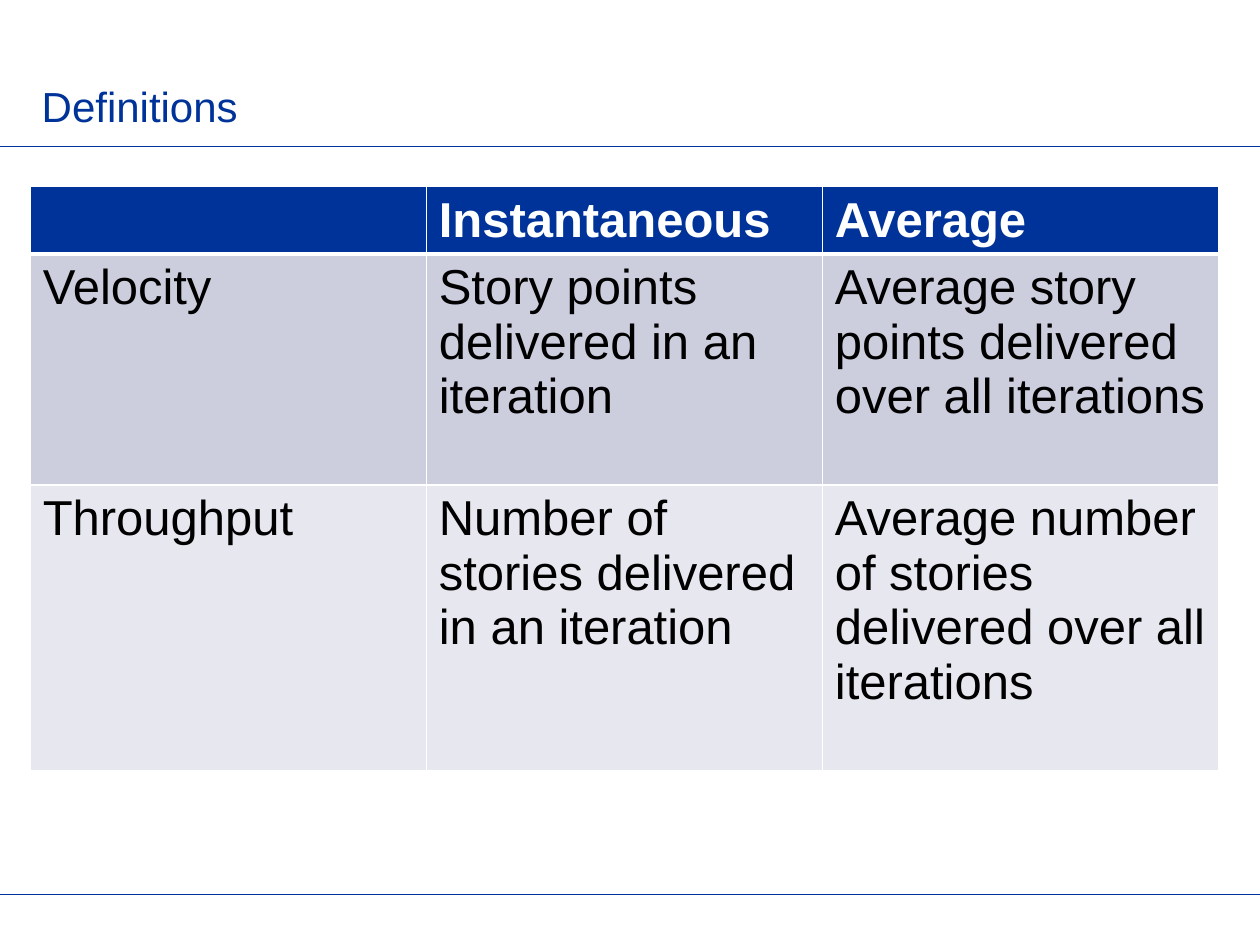
from dataclasses import dataclass
from lxml.etree import SubElement as Sub
from pptx import Presentation
from pptx.dml.color import RGBColor as Rgb
from pptx.enum.shapes import MSO_CONNECTOR as Conn
from pptx.enum.text import MSO_ANCHOR as Anchor, MSO_AUTO_SIZE as Auto, PP_ALIGN as Align
from pptx.oxml.ns import qn
from pptx.util import Pt


@dataclass(frozen=True)
class Theme:
    font: str = "Arial"
    blue: str = "003399"
    white: str = "FFFFFF"
    black: str = "000000"
    dark: str = "CCCEDE"
    light: str = "E7E8EF"
    head: float = 24
    body: float = 28
    rule: float = 0.5
    thin: float = 1
    thick: float = 3


@dataclass(frozen=True)
class Row:
    cells: tuple[str, ...]
    high: float
    fill: str
    ink: str = Theme.black
    bold: bool = False
    top: float = Theme.thin
    base: float = Theme.thin


T = Theme()
WIDE, HIGH = 720, 540
RULES = (83.5, 511.2)
LEFT, TOP, COL = 17.3, 106.6, 226.3
ROWS = (
    Row(("", "Instantaneous", "Average"), 38.4, T.blue, T.white, True, base=T.thick),
    Row(("Velocity", "Story points delivered in an iteration",
         "Average story points delivered over all iterations"),
        132.2, T.dark, top=T.thick),
    Row(("Throughput", "Number of stories delivered in an iteration",
         "Average number of stories delivered over all iterations"),
        163.2, T.light),
)


def add_run(para, text: str, size: float, ink: str, bold: bool = False) -> None:
    run = para.add_run()
    run.text = text
    font = run.font
    font.name, font.size, font.bold = T.font, Pt(size), bold
    font.color.rgb = Rgb.from_string(ink)


def add_rule(slide, y: float) -> None:
    line = slide.shapes.add_connector(Conn.STRAIGHT, Pt(0), Pt(y), Pt(WIDE), Pt(y))
    line.line.color.rgb = Rgb.from_string(T.blue)
    line.line.width = Pt(T.rule)
    Sub(line._element.spPr, qn("a:effectLst"))


def add_edge(cell, side: str, width: float) -> None:
    edge = Sub(cell._tc.get_or_add_tcPr(), qn(f"a:ln{side}"), w=str(Pt(width)))
    fill = Sub(edge, qn("a:solidFill"))
    Sub(fill, qn("a:srgbClr"), val=T.white)


def set_cell(cell, text: str, row: Row) -> None:
    # Borders come before the fill in the cell's XML
    for side, width in zip("LRTB", (T.thin, T.thin, row.top, row.base)):
        add_edge(cell, side, width)
    cell.fill.solid()
    cell.fill.fore_color.rgb = Rgb.from_string(row.fill)
    if text:
        add_run(cell.text_frame.paragraphs[0], text, T.body, row.ink, row.bold)


def add_title(slide, text: str) -> None:
    title = slide.shapes.title
    title.left, title.top, title.width, title.height = map(Pt, (16.6, 10.8, 596, 67.7))
    frame = title.text_frame
    frame.auto_size = Auto.NONE
    frame.vertical_anchor = Anchor.BOTTOM
    para = frame.paragraphs[0]
    para.alignment = Align.LEFT
    add_run(para, text, T.head, T.blue)


def add_grid(slide, rows: tuple[Row, ...]) -> None:
    cols = len(rows[0].cells)
    high = sum(row.high for row in rows)
    grid = slide.shapes.add_table(len(rows), cols, Pt(LEFT), Pt(TOP),
                                  Pt(COL * cols), Pt(high)).table
    for col in grid.columns:
        col.width = Pt(COL)
    for line, row in zip(grid.rows, rows):
        line.height = Pt(row.high)
        for cell, text in zip(line.cells, row.cells):
            set_cell(cell, text, row)


def main() -> None:
    deck = Presentation()
    deck.slide_width, deck.slide_height = Pt(WIDE), Pt(HIGH)
    slide = deck.slides.add_slide(deck.slide_layouts[5])
    # Rules above and below the content
    for y in RULES:
        add_rule(slide, y)
    # Title and table
    add_title(slide, "Definitions")
    add_grid(slide, ROWS)
    deck.save("out.pptx")


if __name__ == "__main__":
    main()
